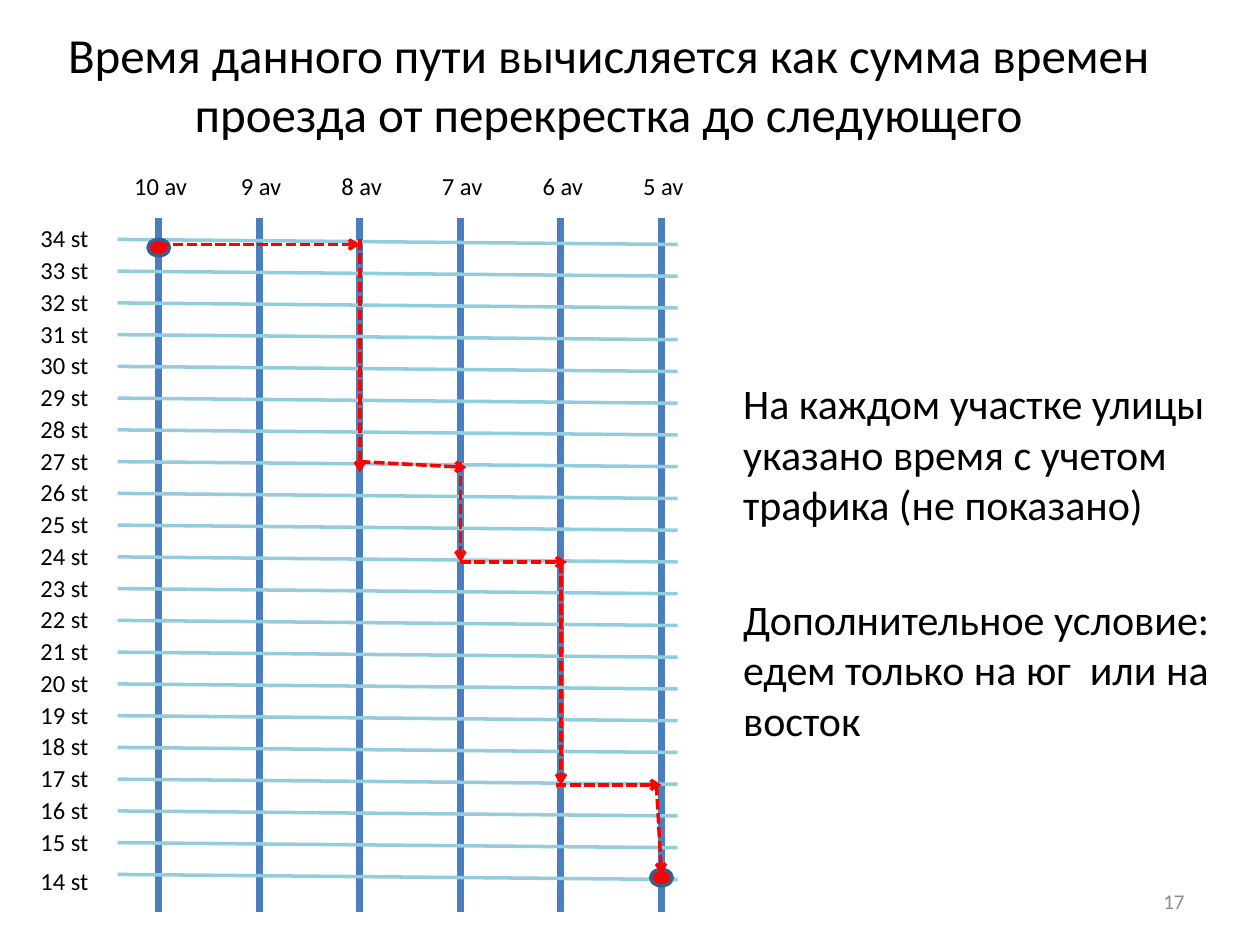
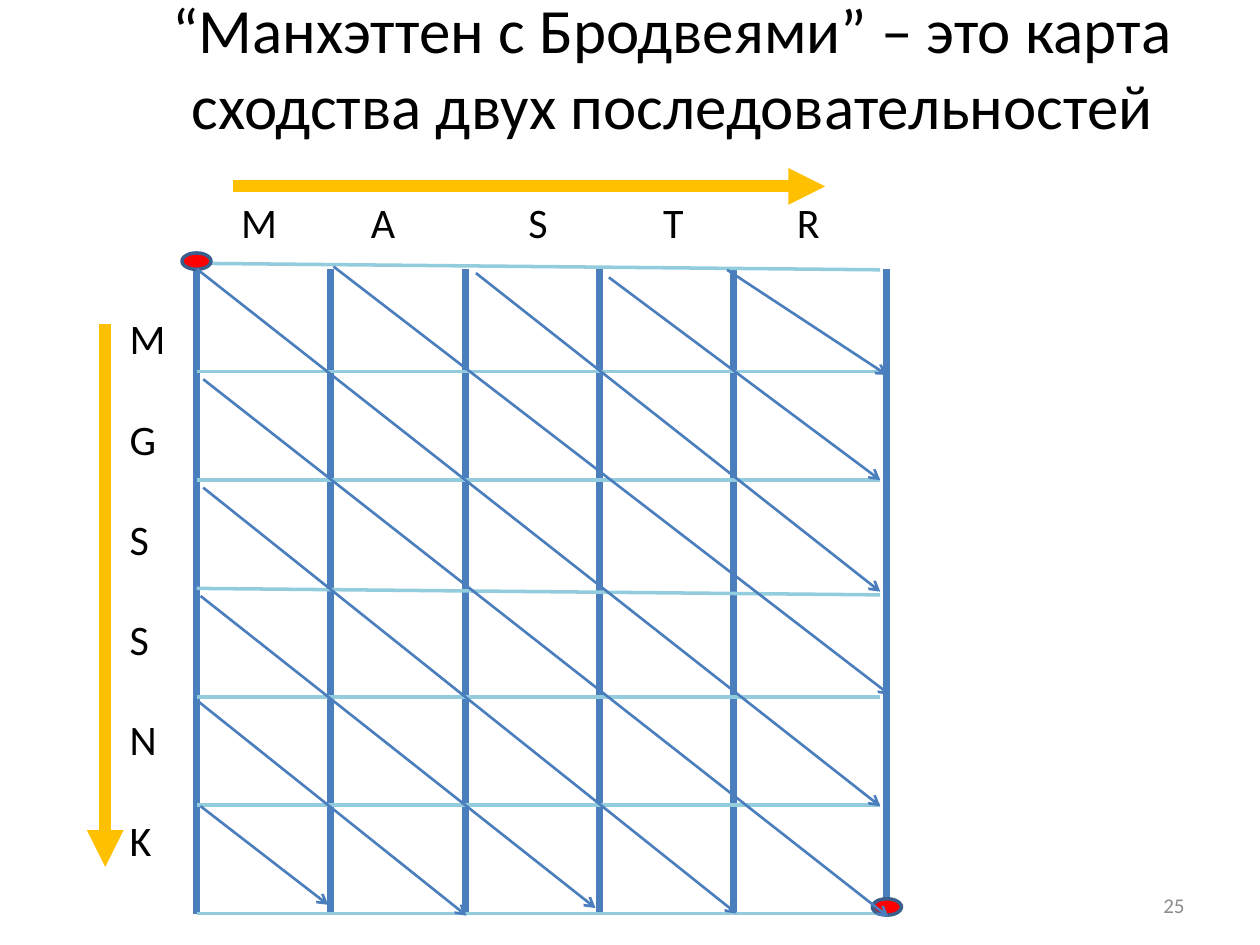
from dataclasses import dataclass

from lxml.etree import SubElement
from pptx import Presentation
from pptx.dml.color import RGBColor
from pptx.enum.dml import MSO_LINE
from pptx.enum.shapes import MSO_CONNECTOR as CONN, MSO_SHAPE as SHAPE
from pptx.enum.text import MSO_ANCHOR as ANCHOR, MSO_AUTO_SIZE as FIT, PP_ALIGN as AL
from pptx.oxml.ns import qn
from pptx.util import Inches, Pt

# Shared look
FONT = "Calibri"
BLACK, GREY = "000000", "8C8C8C"
AVENUE, STREET = "4B7EBC", "93CDDD"
RED, DOT_EDGE, GOLD = "FF0000", "3A5F8C", "FFC000"
TITLE_ONLY = 5


def rgb(color):
    return RGBColor.from_string(color)


@dataclass
class Grid:
    """A box in inches, measured in columns and rows."""
    left: float
    top: float
    width: float
    height: float
    cols: int
    rows: int

    def x(self, col):
        return self.left + col * self.width / self.cols

    def y(self, row):
        return self.top + row * self.height / self.rows

    def at(self, col, row):
        return self.x(col), self.y(row)


# Basic parts
def style(tf, size, color=BLACK, align=AL.LEFT):
    for p in tf.paragraphs:
        p.alignment = align
        for r in p.runs:
            r.font.name, r.font.size = FONT, Pt(size)
            r.font.color.rgb = rgb(color)


def add_text(shapes, box, text, size, color=BLACK, align=AL.LEFT, wrap=True):
    tf = shapes.add_textbox(*map(Inches, box)).text_frame
    tf.word_wrap = wrap
    tf.text = text
    style(tf, size, color, align)
    return tf


def add_line(shapes, start, end, color, width, head=None, dash=None):
    line = shapes.add_connector(CONN.STRAIGHT, *map(Inches, (*start, *end)))
    line.line.color.rgb = rgb(color)
    line.line.width = Pt(width)
    if dash:
        line.line.dash_style = dash
    if head:
        SubElement(line.line._get_or_add_ln(), qn("a:tailEnd"), type=head)
    SubElement(line._element.spPr, qn("a:effectLst"))


def add_dot(shapes, center, w, h):
    x, y = center
    sp = shapes.add_shape(SHAPE.OVAL, *map(Inches, (x - w / 2, y - h / 2, w, h)))
    sp.shadow.inherit = False
    sp.fill.solid()
    sp.fill.fore_color.rgb = rgb(RED)
    sp.line.color.rgb = rgb(DOT_EDGE)
    sp.line.width = Pt(2)


def add_slide(prs, title, box, size, number, number_top):
    s = prs.slides.add_slide(prs.slide_layouts[TITLE_ONLY])
    sp = s.shapes.title
    sp.left, sp.top, sp.width, sp.height = map(Inches, box)
    tf = sp.text_frame
    tf.text = title
    tf.auto_size, tf.vertical_anchor = FIT.NONE, ANCHOR.MIDDLE
    style(tf, size, align=AL.CENTER)
    tf = add_text(s.shapes, (7.17, number_top, 2.33, 0.4), number, 12, GREY, AL.RIGHT)
    tf.vertical_anchor = ANCHOR.MIDDLE
    return s


# Street map with the route
def draw_city(shapes, grid):
    for col in range(grid.cols + 1):
        add_line(shapes, grid.at(col, -0.67), grid.at(col, 21.19), AVENUE, 4)
        add_text(shapes, (grid.x(col) - 0.3, grid.y(-2.34), 0.63, 0.34),
                 f"{10 - col} av", 14, align=AL.CENTER, wrap=False)
    for row in range(grid.rows + 1):
        add_line(shapes, grid.at(-0.41, row), grid.at(5.16, row + 0.16), STREET, 2)
        drop = 0.24 if row == grid.rows else 0
        add_text(shapes, (*grid.at(-1.3, row - 0.7 + drop), 0.59, 0.34),
                 f"{34 - row} st", 14, wrap=False)

    for center in ((0, 0.26), (5, 20.1)):
        add_dot(shapes, grid.at(*center), 0.17, 0.13)

    # Route legs as (column, row) pairs
    legs = [((0, 0.16), (2, 0.16)), ((2, 0), (2, 7.34)),
            ((2, 7), (3.06, 7.18)), ((3, 7), (3, 10.16)),
            ((3, 10.16), (4.06, 10.16)), ((4, 10.16), (4, 17.18)),
            ((3.95, 17.18), (5, 17.18)), ((4.95, 17.18), (5, 20))]
    for start, end in legs:
        add_line(shapes, grid.at(*start), grid.at(*end), RED, 2,
                 "arrow", MSO_LINE.SQUARE_DOT)


# Similarity map of two sequences
def draw_similarity_map(shapes, grid):
    right = 5.14
    for col in (*range(grid.cols), right):
        bottom = 5.86 if col == right else 6
        add_line(shapes, grid.at(col, 0.05), grid.at(col, bottom), AVENUE, 4)
    for row in range(grid.rows + 1):
        tilt = 0.06 if row in (0, 3) else 0
        add_line(shapes, grid.at(0, row), grid.at(5.09, row + tilt), STREET, 2)

    for center in ((0, -0.02), (right, 5.94)):
        add_dot(shapes, grid.at(*center), 0.23, 0.13)

    # Diagonals as (column, row) pairs
    diagonals = [((0, 0.05), (5.09, 5.01)), ((0.05, 1.07), (5.15, 6.03)),
                 ((0.05, 2.07), (4.02, 6)), ((0.03, 3.07), (2.97, 5.95)),
                 ((0.02, 4.05), (2.01, 6.02)), ((0.03, 5.01), (0.98, 5.92)),
                 ((1.02, 0.03), (5.16, 3.98)), ((2.08, 0.09), (5.09, 3.03)),
                 ((3.07, 0.13), (5.09, 2)), ((3.95, 0.06), (5.14, 1.03))]
    for start, end in diagonals:
        add_line(shapes, grid.at(*start), grid.at(*end), AVENUE, 1.5, "arrow")


def draw_sequences(shapes, grid, across, down):
    # Horizontal sequence, spread by tab stops
    tf = add_text(shapes, (*grid.at(0.24, -0.67), 5, 0.5), "\t".join(across), 24)
    tabs = SubElement(tf.paragraphs[0]._p.get_or_add_pPr(), qn("a:tabLst"))
    for stop in (1.03, 2.28, 3.35, 4.41):
        SubElement(tabs, qn("a:tab"), pos=str(Inches(stop)), algn="l")

    # Vertical sequence, one paragraph per letter
    tf = add_text(shapes, (*grid.at(-0.59, 0.4), 0.52, 4.54), "\n".join(down), 24)
    for p in tf.paragraphs[1:]:
        p.space_before = Pt(28.5)

    # Reading directions
    for start, end in (((-0.68, 0.56), (-0.68, 5.57)), ((0.27, -0.71), (4.68, -0.71))):
        add_line(shapes, grid.at(*start), grid.at(*end), GOLD, 7, "triangle")


def build_route_slide(prs):
    s = add_slide(prs, "Время данного пути вычисляется как сумма времен "
                  "проезда от перекрестка до следующего",
                  (0, 0.14, 9.66, 1.04), 28, "17", 6.95)
    draw_city(s.shapes.add_group_shape().shapes, Grid(1.26, 1.9, 3.99, 5.04, 5, 20))
    notes = ["На каждом участке улицы указано время с учетом трафика (не показано)",
             "Дополнительное условие: едем только на юг  или на восток"]
    for i, note in enumerate(notes):
        add_text(s.shapes, (5.8, 2.95 + 1.71 * i, 3.91, 1.31), note, 24)


def build_similarity_slide(prs):
    s = add_slide(prs, "“Манхэттен с Бродвеями” – это карта сходства "
                  "двух последовательностей",
                  (1.17, -0.1, 8.33, 1.25), 36, "25", 6.98)
    grid = Grid(1.56, 2.09, 5.33, 5.16, 5, 6)
    draw_similarity_map(s.shapes.add_group_shape().shapes, grid)
    draw_sequences(s.shapes, grid, "MASTR", "MGSSNK")


def main():
    prs = Presentation()
    prs.slide_width, prs.slide_height = Inches(10), Inches(7.5)
    build_route_slide(prs)
    build_similarity_slide(prs)
    prs.save("out.pptx")


if __name__ == "__main__":
    main()
